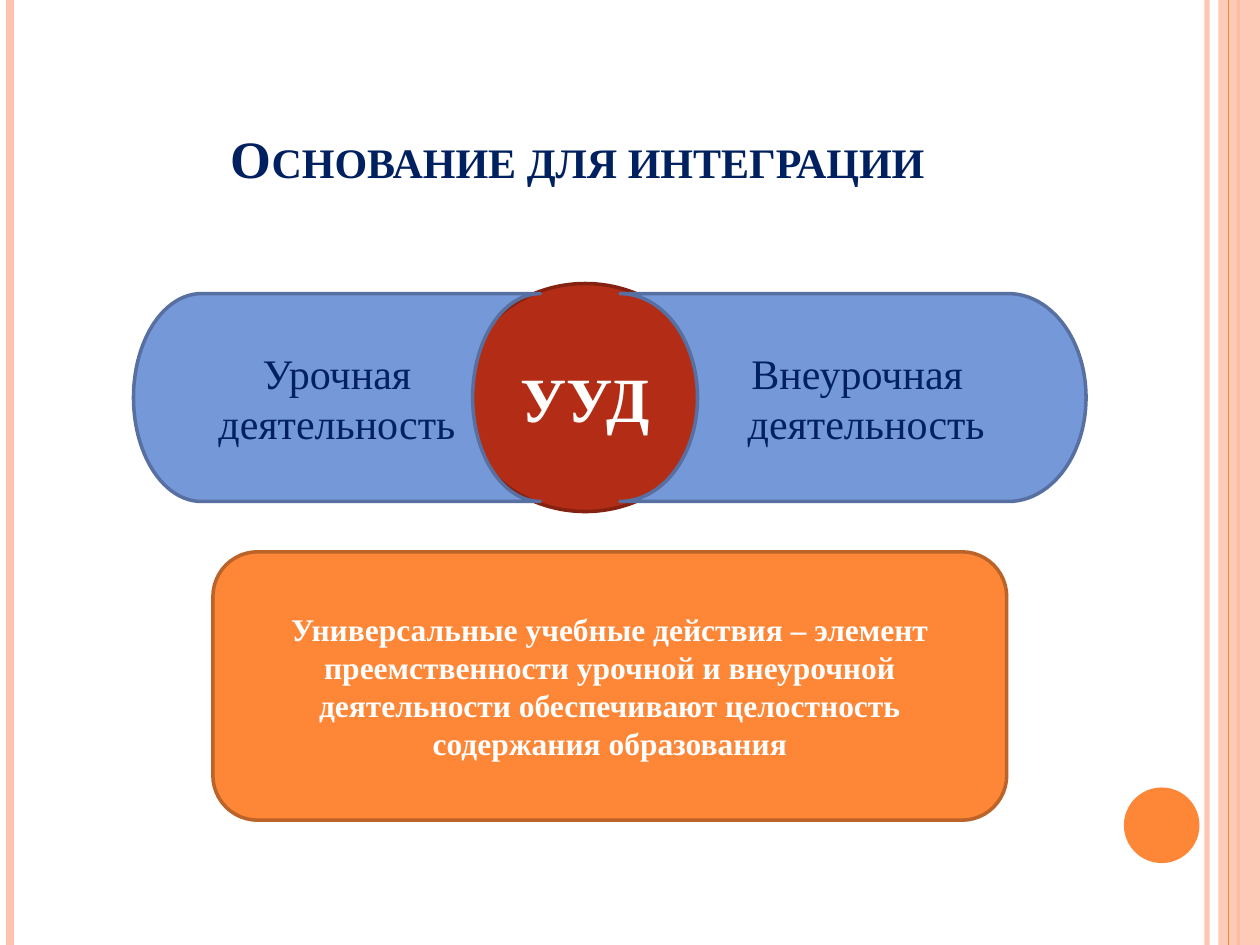
"""Build the slide on what links lessons and extracurricular activity."""
from lxml.etree import SubElement
from pptx import Presentation
from pptx.dml.color import RGBColor
from pptx.enum.shapes import MSO_CONNECTOR as Connector, MSO_SHAPE as Shape
from pptx.enum.text import MSO_ANCHOR as Anchor, PP_ALIGN as Align
from pptx.oxml.ns import qn
from pptx.util import Inches, Pt

NAVY = RGBColor(0x00, 0x20, 0x60)
WHITE = RGBColor(0xFF, 0xFF, 0xFF)
PEACH = RGBColor(0xFE, 0xC3, 0xAE)
ORANGE = RGBColor(0xFE, 0x86, 0x37)
DARK_ORANGE = RGBColor(0xBC, 0x63, 0x29)
BLUE = RGBColor(0x75, 0x98, 0xD9)
DARK_BLUE = RGBColor(0x57, 0x70, 0xA1)
RED = RGBColor(0xB3, 0x2C, 0x16)
DARK_RED = RGBColor(0x84, 0x21, 0x10)
FONT = "Times New Roman"


def set_opacity(element, percent):
    color = next(element.iter(qn("a:srgbClr")))
    SubElement(color, qn("a:alpha")).set("val", str(percent * 1000))


def add_stripe(slide, x, color, width, opacity=100):
    stripe = slide.shapes.add_connector(
        Connector.STRAIGHT, Inches(x), 0, Inches(x), Inches(7.5))
    stripe.line.color.rgb = color
    stripe.line.width = Pt(width)
    properties = stripe._element.spPr
    SubElement(properties, qn("a:effectLst"))
    if opacity < 100:
        set_opacity(properties, opacity)


def add_figure(slide, kind, box, fill, outline=None, flipped=False):
    figure = slide.shapes.add_shape(kind, *map(Inches, box))
    figure.shadow.inherit = False
    figure.fill.solid()
    figure.fill.fore_color.rgb = fill
    if outline is None:
        figure.line.fill.background()
    else:
        figure.line.color.rgb = outline
        figure.line.width = Pt(2)
    if flipped:
        figure._element.spPr.xfrm.set("flipH", "1")
    return figure


def write(holder, text, size, color, bold=False, align=Align.CENTER,
          anchor=Anchor.MIDDLE, small_caps=False, margin=0, indent=0, before=0):
    frame = holder.text_frame
    frame.word_wrap = True
    frame.vertical_anchor = anchor
    paragraph = frame.paragraphs[0]
    paragraph.alignment = align
    paragraph.space_before = Pt(before)
    if margin:
        layout = paragraph._p.get_or_add_pPr()
        layout.set("marL", str(Inches(margin)))
        layout.set("indent", str(Inches(indent)))
    run = paragraph.add_run()
    run.text = text
    run.font.name = FONT
    run.font.size = Pt(size)
    run.font.bold = bold
    run.font.color.rgb = color
    if small_caps:
        run._r.get_or_add_rPr().set("cap", "small")


def add_decoration(slide):
    add_stripe(slide, 9.58, PEACH, 3, opacity=93)
    add_stripe(slide, 0.08, PEACH, 4.5)
    add_stripe(slide, 9.83, ORANGE, 1.5)
    band = add_figure(slide, Shape.RECTANGLE, (9.67, 0, 0.33, 7.5), PEACH)
    set_opacity(band._element.spPr, 87)
    add_stripe(slide, 9.75, ORANGE, 0.75)
    add_figure(slide, Shape.OVAL, (8.92, 6.25, 0.6, 0.6), ORANGE)


def main():
    deck = Presentation()
    deck.slide_width, deck.slide_height = Inches(10), Inches(7.5)
    slide = deck.slides.add_slide(deck.slide_layouts[6])
    add_decoration(slide)

    title = slide.shapes.add_textbox(*map(Inches, (0.5, 0.3, 8.17, 1.25)))
    write(title, "Основание для интеграции", 30, NAVY, bold=True,
          anchor=Anchor.BOTTOM, small_caps=True)

    core = add_figure(slide, Shape.FLOWCHART_CONNECTOR,
                      (3.66, 2.25, 1.97, 1.81), RED, DARK_RED)
    write(core, "УУД", 36, WHITE, bold=True)

    lessons = add_figure(slide, Shape.FLOWCHART_STORED_DATA,
                         (1.06, 2.33, 3.23, 1.65), BLUE, DARK_BLUE)
    write(lessons, "Урочная деятельность", 24, NAVY)

    extracurricular = add_figure(slide, Shape.FLOWCHART_STORED_DATA,
                                 (4.92, 2.33, 3.7, 1.65), BLUE, DARK_BLUE,
                                 flipped=True)
    write(extracurricular, "Внеурочная деятельность", 24, NAVY,
          align=Align.LEFT, margin=0.3, indent=0.03, before=6)

    summary = add_figure(slide, Shape.ROUNDED_RECTANGLE,
                         (1.69, 4.38, 6.3, 2.13), ORANGE, DARK_ORANGE)
    write(summary, "Универсальные учебные действия – элемент преемственности "
          "урочной и внеурочной деятельности обеспечивают целостность "
          "содержания образования", 18, WHITE, bold=True)

    deck.save("out.pptx")


if __name__ == "__main__":
    main()
